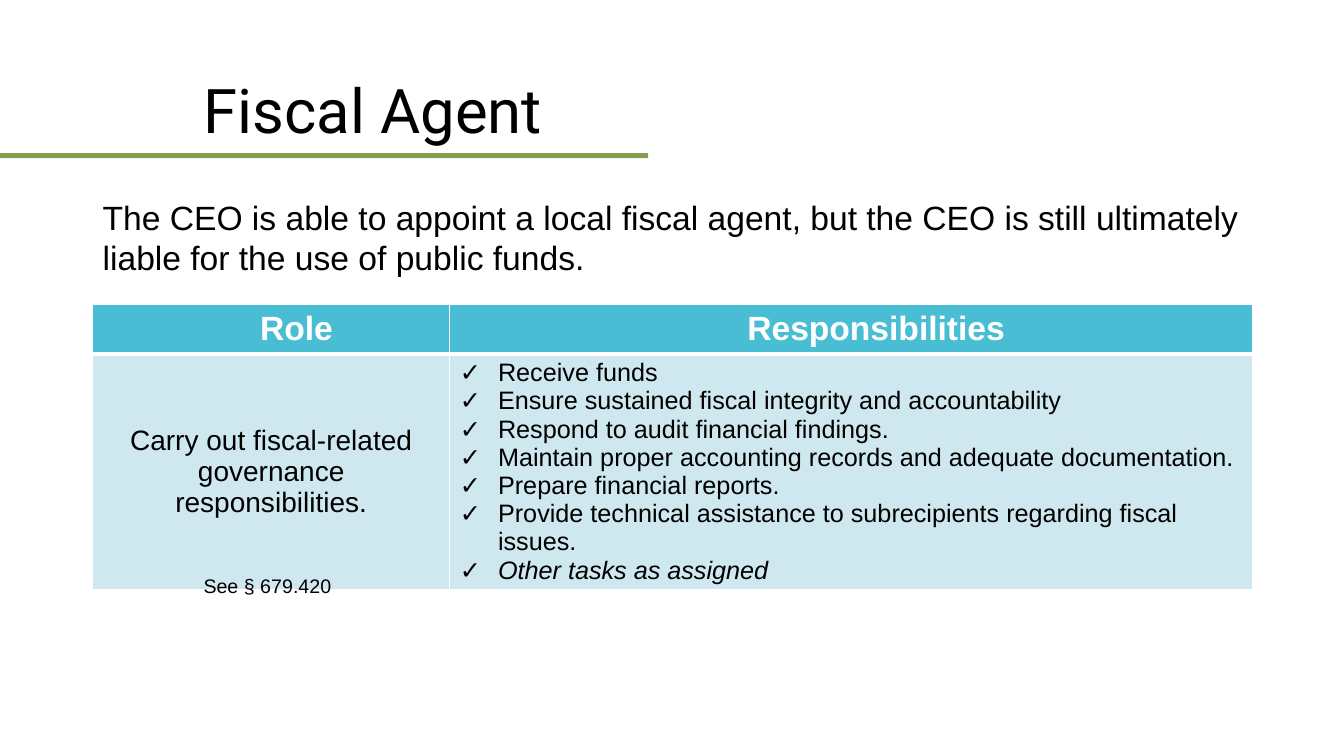
from lxml import etree
from pptx import Presentation
from pptx.dml.color import RGBColor
from pptx.enum.shapes import MSO_SHAPE
from pptx.enum.text import MSO_ANCHOR, MSO_AUTO_SIZE, PP_ALIGN
from pptx.oxml.ns import qn
from pptx.util import Pt

PX = 9144
RECTANGLE = MSO_SHAPE.RECTANGLE
MIDDLE, TOP = MSO_ANCHOR.MIDDLE, MSO_ANCHOR.TOP
CENTER, LEFT = PP_ALIGN.CENTER, PP_ALIGN.LEFT
NO_AUTOFIT, GROW = MSO_AUTO_SIZE.NONE, MSO_AUTO_SIZE.SHAPE_TO_FIT_TEXT
BLACK, WHITE = "000000", "FFFFFF"
GREEN, TEAL, PALE_TEAL = "85A051", "48BDD4", "CFE8EF"
MARGIN, CONTENT_WIDTH = 92, 1150
COLUMN_WIDTHS, ROW_HEIGHTS = (354, 796), (49, 202)
RESPONSIBILITIES = (
    "Receive funds",
    "Ensure sustained fiscal integrity and accountability",
    "Respond to audit financial findings.",
    "Maintain proper accounting records and adequate documentation.",
    "Prepare financial reports.",
    "Provide technical assistance to subrecipients regarding fiscal issues.",
    "Other tasks as assigned",
)


def color(value):
    return RGBColor.from_string(value)


def set_font(paragraph, size, value=BLACK, name="Arial", bold=False):
    paragraph.font.size = Pt(size)
    paragraph.font.name = name
    paragraph.font.bold = bold
    paragraph.font.color.rgb = color(value)


presentation = Presentation()
presentation.slide_width = 1333 * PX
presentation.slide_height = 750 * PX
slide = presentation.slides.add_slide(presentation.slide_layouts[5])
slide.background.fill.solid()
slide.background.fill.fore_color.rgb = color(WHITE)

bar = slide.shapes.add_shape(RECTANGLE, 0, 152 * PX, 643 * PX, 5 * PX)
bar.shadow.inherit = False
bar.fill.solid()
bar.fill.fore_color.rgb = color(GREEN)
bar.line.fill.background()

title = slide.shapes.title
title.left, title.top = MARGIN * PX, 40 * PX
title.width, title.height = CONTENT_WIDTH * PX, 145 * PX
title.text_frame.text = "\tFiscal Agent"
title.text_frame.auto_size = NO_AUTOFIT
title.text_frame.vertical_anchor = MIDDLE
paragraph = title.text_frame.paragraphs[0]
paragraph.alignment = LEFT
paragraph.line_spacing = 0.9
tab_stops = etree.SubElement(paragraph._p.get_or_add_pPr(), qn("a:tabLst"))
etree.SubElement(tab_stops, qn("a:tab"), pos=str(100 * PX), algn="l")
set_font(paragraph, 44, name="Roboto")

table = slide.shapes.add_table(
    2, 2, MARGIN * PX, 302 * PX, CONTENT_WIDTH * PX, sum(ROW_HEIGHTS) * PX
).table
for column, width in zip(table.columns, COLUMN_WIDTHS):
    column.width = width * PX
for row, height in zip(table.rows, ROW_HEIGHTS):
    row.height = height * PX

for row_index, row in enumerate(table.rows):
    for cell in row.cells:
        properties = cell._tc.get_or_add_tcPr()
        header_edge = "a:lnT" if row_index else "a:lnB"
        for edge in ("a:lnL", "a:lnR", "a:lnT", "a:lnB"):
            line_width = Pt(3 if edge == header_edge else 1)
            line = etree.SubElement(properties, qn(edge), w=str(line_width))
            line_fill = etree.SubElement(line, qn("a:solidFill"))
            etree.SubElement(line_fill, qn("a:srgbClr"), val=WHITE)
        cell.fill.solid()
        cell.fill.fore_color.rgb = color(PALE_TEAL if row_index else TEAL)
        cell.vertical_anchor = MIDDLE

for column_index, heading in enumerate(("Role", "Responsibilities")):
    cell = table.cell(0, column_index)
    cell.text = heading
    paragraph = cell.text_frame.paragraphs[0]
    paragraph.level = 1
    paragraph.alignment = CENTER
    paragraph._p.get_or_add_pPr().set("marL", str(50 * PX))
    set_font(paragraph, 24, WHITE, bold=True)

role = table.cell(1, 0)
role.text = "Carry out fiscal-related governance responsibilities."
role.text_frame.paragraphs[0].alignment = CENTER
set_font(role.text_frame.paragraphs[0], 20)

duties = table.cell(1, 1)
duties.vertical_anchor = TOP
duties.text = "\n".join(RESPONSIBILITIES)
for paragraph in duties.text_frame.paragraphs:
    properties = paragraph._p.get_or_add_pPr()
    properties.set("marL", str(38 * PX))
    properties.set("indent", str(-38 * PX))
    etree.SubElement(properties, qn("a:buFont"), typeface="Arial")
    etree.SubElement(properties, qn("a:buChar"), char="✓")
    set_font(paragraph, 18)
duties.text_frame.paragraphs[-1].font.italic = True

for text, left, top, width, height, size in (
    ("The CEO is able to appoint a local fiscal agent, but the CEO is still "
     "ultimately liable for the use of public funds.",
     MARGIN, 190, CONTENT_WIDTH, 91, 24),
    ("See § 679.420", 192, 564, 845, 34, 14),
):
    text_box = slide.shapes.add_textbox(left * PX, top * PX, width * PX, height * PX)
    text_box.text_frame.word_wrap = True
    text_box.text_frame.auto_size = GROW
    text_box.text_frame.text = text
    set_font(text_box.text_frame.paragraphs[0], size)

presentation.save("out.pptx")
